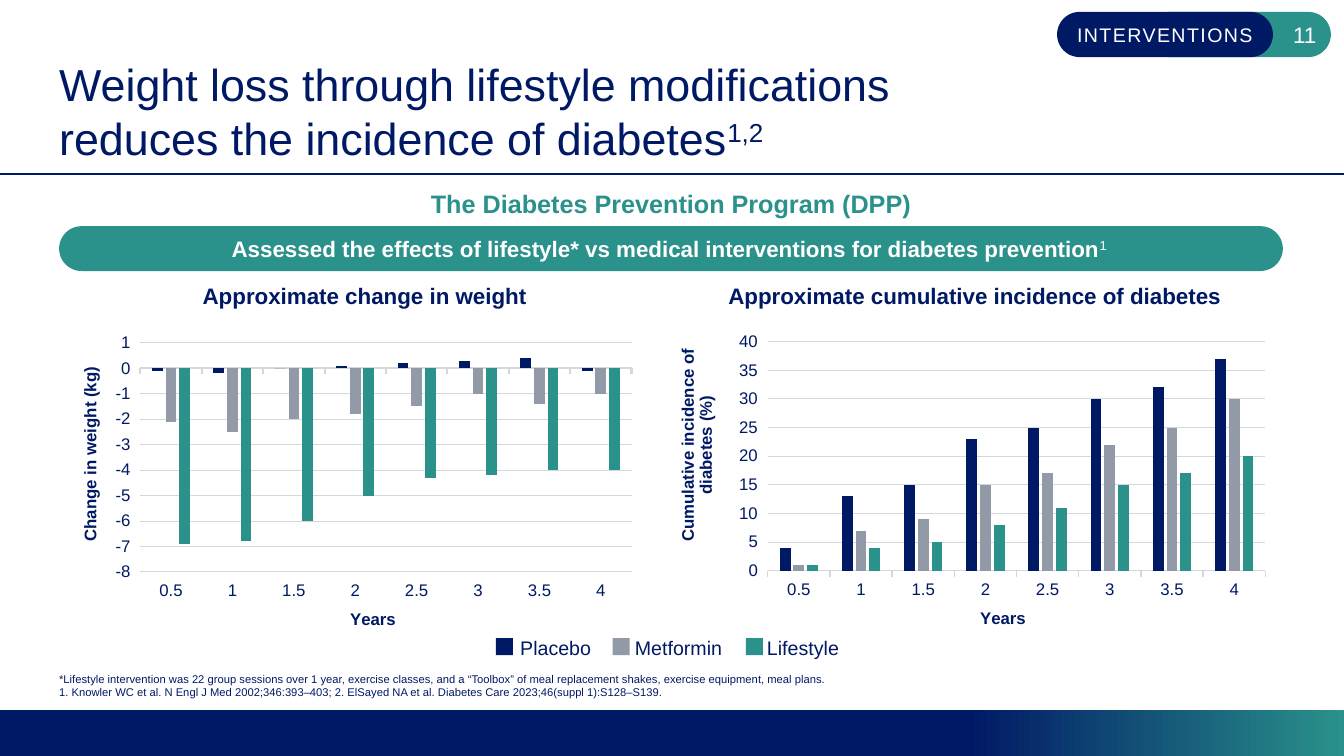
from lxml import etree
from pptx import Presentation
from pptx import util as u
from pptx.chart.data import CategoryChartData
from pptx.dml.color import RGBColor
from pptx.enum import chart as charts, shapes, text
from pptx.oxml import parse_xml
from pptx.oxml.ns import nsdecls, qn

NAVY = RGBColor(0x00, 0x19, 0x65)
TEAL = RGBColor(0x2A, 0x91, 0x8B)
GREY = RGBColor(0x93, 0x9A, 0xA7)
PALE = RGBColor(0xD4, 0xD7, 0xDC)
WHITE = RGBColor(0xFF, 0xFF, 0xFF)
FONT = "Arial"
WIDTH, HEIGHT = 33.87, 19.05
YEARS = ["0.5", "1", "1.5", "2", "2.5", "3", "3.5", "4"]
ARMS = {"Placebo": NAVY, "Metformin": GREY, "Lifestyle": TEAL}
LEFT, CENTER, RIGHT = text.PP_ALIGN.LEFT, text.PP_ALIGN.CENTER, text.PP_ALIGN.RIGHT
TOP, MIDDLE, BOTTOM = text.MSO_ANCHOR.TOP, text.MSO_ANCHOR.MIDDLE, text.MSO_ANCHOR.BOTTOM


def cm(box):
    return [u.Cm(length) for length in box]


def style_font(font, size, color, bold=False):
    font.name, font.size, font.bold = FONT, u.Pt(size), bold
    font.color.rgb = color


def set_frame(shape, align, anchor, margins=(0, 0), wrap=True):
    """Prepare the text frame and return its first paragraph."""
    frame = shape.text_frame
    frame.auto_size, frame.word_wrap = text.MSO_AUTO_SIZE.NONE, wrap
    frame.vertical_anchor = anchor
    frame.margin_left = frame.margin_right = u.Cm(margins[0])
    frame.margin_top = frame.margin_bottom = u.Cm(margins[1])
    para = frame.paragraphs[0]
    para.alignment = align
    return para


def add_span(para, words, size, color, bold=False, raised=False):
    span = para.add_run()
    span.text = words
    style_font(span.font, size, color, bold)
    if raised:
        span.font._element.set("baseline", "30000")
    return span


def add_lines(para, lines, size, color, bold=False):
    for index, line in enumerate(lines):
        if index:
            para.add_line_break()
        add_span(para, line, size, color, bold)


def add_block(parent, kind, box, color):
    block = parent.add_shape(kind, *cm(box))
    block.shadow.inherit = False
    block.fill.solid()
    block.fill.fore_color.rgb = color
    block.line.fill.background()
    return block


def add_pill(page, box, color):
    pill = add_block(page.shapes, shapes.MSO_SHAPE.ROUNDED_RECTANGLE, box, color)
    pill.adjustments[0] = 0.5
    return pill


def add_heading(page, box, words, size, color):
    heading = page.shapes.add_textbox(*cm(box))
    para = set_frame(heading, CENTER, TOP, (0.25, 0.13))
    add_span(para, words, size, color, bold=True)


def add_badge(page, box, section, number):
    left, top, width, height = box
    tail = add_pill(page, (left + 2.27, top, width - 2.27, height), TEAL)
    add_span(set_frame(tail, RIGHT, MIDDLE, (0.2, 0.1)), number, 16, WHITE)
    label = add_pill(page, (left, top, 5.44, height), NAVY)
    span = add_span(set_frame(label, CENTER, MIDDLE, (0.2, 0.1)), section, 14, WHITE)
    span.font._element.set("spc", "100")


def add_rule(page, top):
    rule = page.shapes.add_connector(
        shapes.MSO_CONNECTOR.STRAIGHT, 0, u.Cm(top), u.Cm(WIDTH), u.Cm(top))
    rule.line.color.rgb, rule.line.width = NAVY, u.Pt(1.5)
    etree.SubElement(rule._element.spPr, qn("a:effectLst"))


def add_footer_band(page, box):
    band = add_block(page.shapes, shapes.MSO_SHAPE.RECTANGLE, box, NAVY)
    band.fill.gradient()
    band.fill.gradient_angle = 0
    for stop, position, color in zip(band.fill.gradient_stops, (0.72, 1), (NAVY, TEAL)):
        stop.position, stop.color.rgb = position, color


def fill_title(page, box):
    title = page.shapes.title
    title.left, title.top, title.width, title.height = cm(box)
    para = set_frame(title, LEFT, BOTTOM)
    add_lines(para, ["Weight loss through lifestyle modifications",
                     "reduces the incidence of diabetes"], 32, NAVY)
    add_span(para, "1,2", 32, NAVY, raised=True)


def fill_footnotes(page, box):
    notes = page.placeholders[1]
    notes.left, notes.top, notes.width, notes.height = cm(box)
    para = set_frame(notes, LEFT, BOTTOM)
    properties = para._p.get_or_add_pPr()
    properties.set("marL", "0")
    properties.set("indent", "0")
    etree.SubElement(properties, qn("a:buNone"))
    para.space_before, para.space_after = u.Pt(0), u.Pt(6)
    add_lines(para, [
        "*Lifestyle intervention was 22 group sessions over 1 year, exercise classes, "
        "and a “Toolbox” of meal replacement shakes, exercise equipment, meal plans.",
        "1. Knowler WC et al. N Engl J Med 2002;346:393–403; "
        "2. ElSayed NA et al. Diabetes Care 2023;46(suppl 1):S128–S139."], 8, NAVY)


def manual_layout(x, y, size=None):
    """Place a chart part by fractions of the chart's width and height."""
    parts = [("xMode", "edge"), ("yMode", "edge"), ("x", x), ("y", y)]
    if size:
        parts = [("layoutTarget", "inner")] + parts + [("w", size[0]), ("h", size[1])]
    inner = "".join(f'<c:{name} val="{value}"/>' for name, value in parts)
    return parse_xml(f'<c:layout {nsdecls("c")}><c:manualLayout>{inner}'
                     "</c:manualLayout></c:layout>")


def title_axis(axis, lines, x, y):
    add_lines(axis.axis_title.text_frame.paragraphs[0], lines, 12, NAVY, bold=True)
    element = axis.axis_title._element
    for old in element.findall(qn("c:layout")):
        element.remove(old)
    element.find(qn("c:tx")).addnext(manual_layout(x, y))


def add_bar_panel(page, box, heading, heading_span, value_title, title_spot, scale, values,
                  line_width):
    left, top, width, height = box
    add_heading(page, (left + heading_span[0], 6.99, heading_span[1], 0.94),
                heading, 16, NAVY)
    data = CategoryChartData()
    data.categories = YEARS
    for arm, numbers in zip(ARMS, values):
        data.add_series(arm, numbers)
    chart = page.shapes.add_chart(
        charts.XL_CHART_TYPE.COLUMN_CLUSTERED, *cm(box), data).chart
    chart.has_legend = chart.has_title = False
    style_font(chart.font, 10, NAVY)
    plot = chart.plots[0]
    plot.gap_width, plot.overlap, plot.vary_by_categories = 219, -27, False
    for series, color in zip(plot.series, ARMS.values()):
        series.invert_if_negative = False
        series.format.fill.solid()
        series.format.fill.fore_color.rgb = color
    area = chart._chartSpace.chart.plotArea
    for old in area.findall(qn("c:layout")):
        area.remove(old)
    area.insert(0, manual_layout(0.152, 0.055, (0.808, 0.689)))

    # Axes
    years, amounts = chart.category_axis, chart.value_axis
    for axis in (years, amounts):
        style_font(axis.tick_labels.font, 12, NAVY)
        axis.major_tick_mark = charts.XL_TICK_MARK.OUTSIDE
    years.tick_label_position = charts.XL_TICK_LABEL_POSITION.LOW
    years.format.line.color.rgb, years.format.line.width = PALE, u.Pt(line_width)
    amounts.minimum_scale, amounts.maximum_scale, amounts.major_unit = scale
    amounts.format.line.fill.background()
    grid = amounts.major_gridlines.format.line
    grid.color.rgb, grid.width = PALE, u.Pt(0.75)
    title_axis(years, ["Years"], 0.492, 0.845)
    title_axis(amounts, value_title, *title_spot)


def add_legend(page, box):
    left, top, height = box
    legend = page.shapes.add_group_shape()
    places = [(0, 0.61, 1.8), (2.94, 3.5, 2.21), (6.3, 6.83, 1.83)]
    for (arm, color), (swatch, label, width) in zip(ARMS.items(), places):
        add_block(legend.shapes, shapes.MSO_SHAPE.RECTANGLE,
                  (left + swatch, top + 0.17, 0.43, 0.43), color)
        name = legend.shapes.add_textbox(*cm((left + label, top, width, height)))
        para = set_frame(name, LEFT, TOP, wrap=False)
        para.line_spacing = 1.2
        add_span(para, arm, 14, NAVY)


def build_results_page(deck):
    page = deck.slides.add_slide(deck.slide_layouts[1])
    # Frame of the page
    add_badge(page, (26.64, 0.3, 6.9, 1.14), "INTERVENTIONS", "11")
    add_rule(page, 4.39)
    add_footer_band(page, (0, HEIGHT - 1.16, WIDTH, 1.16))
    fill_title(page, (1.49, 1.15, 30.28, 3))
    fill_footnotes(page, (1.49, 16.73, 30.28, 0.89))

    # Study name and aim
    add_heading(page, (1.49, 4.62, 30.84, 1.02),
                "The Diabetes Prevention Program (DPP)", 18, TEAL)
    para = set_frame(add_pill(page, (1.49, 5.7, 30.84, 1.13), TEAL), CENTER, MIDDLE)
    add_span(para, "Assessed the effects of lifestyle* vs medical interventions "
                   "for diabetes prevention", 16, WHITE, bold=True)
    add_span(para, "1 ", 16, WHITE, raised=True)

    # Results
    add_bar_panel(page, (1.21, 8.18, 15.32, 8.38), "Approximate change in weight",
                  (2.71, 10.54), ["Change in weight (kg)"], (0.047, 0.118), (-8, 1, 1),
                  [(-0.1, -0.2, 0, 0.1, 0.2, 0.3, 0.4, -0.1),
                   (-2.1, -2.5, -2, -1.8, -1.5, -1, -1.4, -1),
                   (-6.9, -6.8, -6, -5, -4.3, -4.2, -4, -4)], 1.5)
    add_bar_panel(page, (16.99, 8.15, 15.52, 8.38),
                  "Approximate cumulative incidence of diabetes", (0.16, 14.83),
                  ["Cumulative incidence of", "diabetes (%)"], (0, 0.067), (0, 40, 5),
                  [(4, 13, 15, 23, 25, 30, 32, 37),
                   (1, 7, 9, 15, 17, 22, 25, 30),
                   (1, 4, 5, 8, 11, 15, 17, 20)], 1)
    add_legend(page, (12.5, 15.91, 0.66))


def main():
    deck = Presentation()
    deck.slide_width, deck.slide_height = u.Cm(WIDTH), u.Cm(HEIGHT)
    build_results_page(deck)
    deck.save("out.pptx")


if __name__ == "__main__":
    main()
